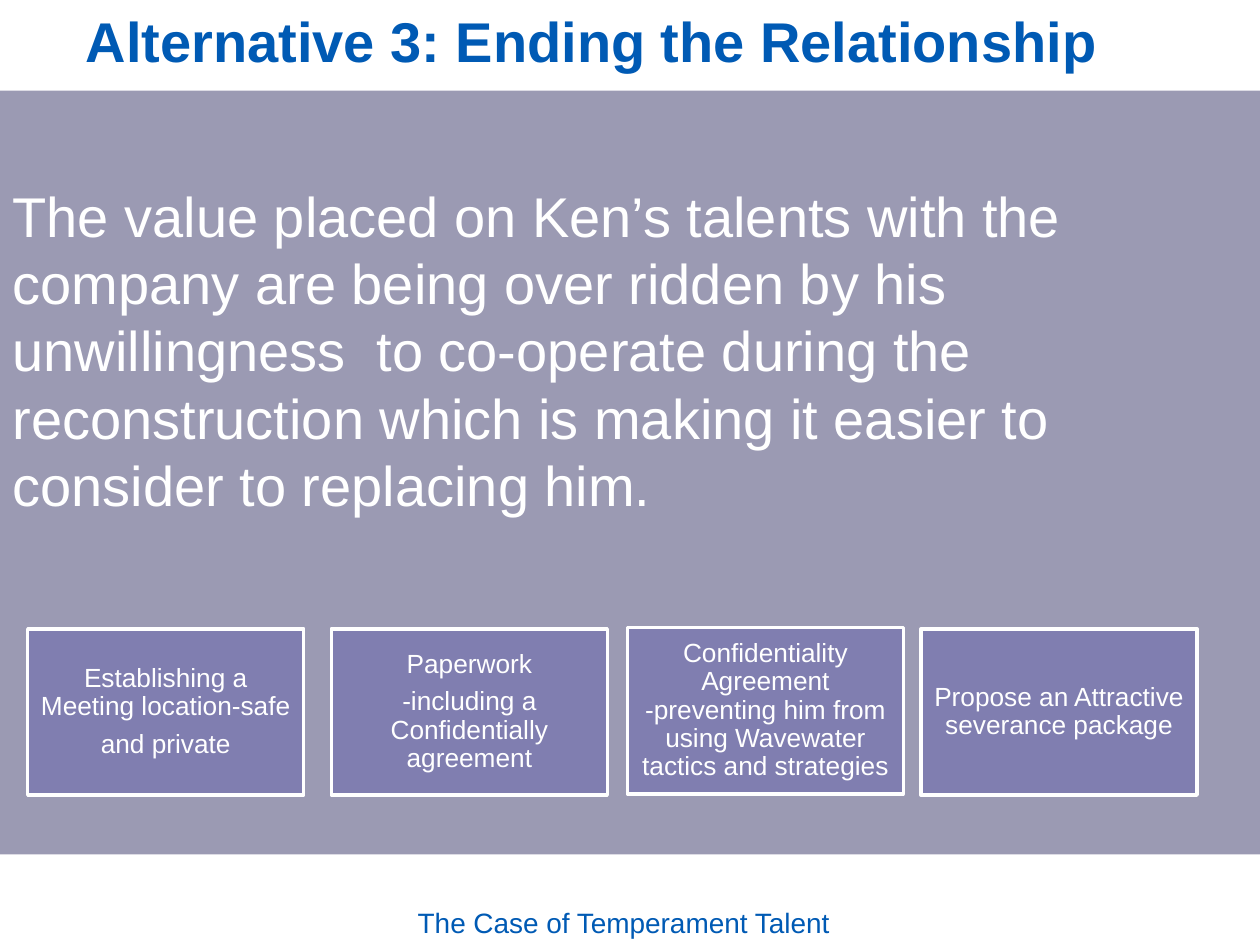
from dataclasses import dataclass

from lxml import etree
from pptx import Presentation
from pptx.dml.color import RGBColor
from pptx.enum.shapes import MSO_SHAPE
from pptx.enum.text import MSO_ANCHOR, MSO_AUTO_SIZE, PP_ALIGN
from pptx.oxml.ns import qn
from pptx.util import Inches, Pt

# Theme
WHITE = RGBColor(0xFF, 0xFF, 0xFF)
BLUE = RGBColor(0x00, 0x5A, 0xB4)
BACKDROP = RGBColor(0x9B, 0x9A, 0xB3)
CARD_FILL = RGBColor(0x80, 0x7E, 0xB0)
FONT = "Arial"
RECTANGLE = MSO_SHAPE.RECTANGLE
LEFT, CENTER = PP_ALIGN.LEFT, PP_ALIGN.CENTER
TOP, MIDDLE, BOTTOM = MSO_ANCHOR.TOP, MSO_ANCHOR.MIDDLE, MSO_ANCHOR.BOTTOM
FIXED_SIZE = MSO_AUTO_SIZE.NONE

# Layout in inches
WIDTH, HEIGHT = 10, 7.5
BAND_HEIGHT = 0.72
CARD_WIDTH, CARD_HEIGHT, CARD_TOP = 2.19, 1.32, 4.99


@dataclass(frozen=True)
class Box:
    left: float
    top: float
    width: float
    height: float

    def lengths(self) -> tuple:
        return tuple(map(Inches, (self.left, self.top, self.width, self.height)))


@dataclass(frozen=True)
class Style:
    size: float
    color: RGBColor
    bold: bool = False
    align: PP_ALIGN = LEFT
    line_spacing: object = 1.0
    space_after: float = 0


@dataclass(frozen=True)
class Card:
    left: float
    lines: tuple
    top: float = CARD_TOP


TITLE_STYLE = Style(32, BLUE, bold=True)
STATEMENT_STYLE = Style(32, WHITE, line_spacing=Pt(38.4))
CARD_STYLE = Style(15, WHITE, align=CENTER, line_spacing=0.9, space_after=5.25)
FOOTER_STYLE = Style(16, BLUE, align=CENTER)

STATEMENT = (
    "The value placed on Ken’s talents with the company are being over ridden "
    "by his unwillingness  to co-operate during the reconstruction which is "
    "making it easier to  consider to replacing him."
)
CARDS = (
    Card(0.22, ("Establishing a Meeting location-safe", "and private")),
    Card(2.63, ("Paperwork", "-including a Confidentially agreement")),
    Card(4.98, ("Confidentiality Agreement -preventing him from using "
                "Wavewater tactics and strategies",), top=4.98),
    Card(7.31, ("Propose an Attractive severance package",)),
)


def write(shape, lines: tuple, style: Style, anchor: MSO_ANCHOR,
          insets: tuple = (0.1, 0.05, 0.1, 0.05)) -> None:
    """Write one unbulleted paragraph for each line."""
    frame = shape.text_frame
    frame.word_wrap = True
    frame.auto_size = FIXED_SIZE
    frame.vertical_anchor = anchor
    (frame.margin_left, frame.margin_top,
     frame.margin_right, frame.margin_bottom) = map(Inches, insets)
    for number, line in enumerate(lines):
        paragraph = frame.add_paragraph() if number else frame.paragraphs[0]
        properties = paragraph._p.get_or_add_pPr()
        properties.set("marL", "0")
        properties.set("indent", "0")
        etree.SubElement(properties, qn("a:buNone"))
        paragraph.alignment = style.align
        paragraph.line_spacing = style.line_spacing
        paragraph.space_before = Pt(0)
        paragraph.space_after = Pt(style.space_after)
        run = paragraph.add_run()
        run.text = line
        run.font.name = FONT
        run.font.size = Pt(style.size)
        run.font.bold = style.bold
        run.font.color.rgb = style.color


def place(shape, box: Box) -> None:
    shape.left, shape.top, shape.width, shape.height = box.lengths()


def add_rectangle(slide, box: Box, fill: RGBColor):
    shape = slide.shapes.add_shape(RECTANGLE, *box.lengths())
    shape.shadow.inherit = False
    shape.fill.solid()
    shape.fill.fore_color.rgb = fill
    shape.line.fill.background()
    return shape


def add_band(slide, top: float) -> None:
    """Add a full-width white band behind everything else."""
    band = add_rectangle(slide, Box(0, top, WIDTH, BAND_HEIGHT), WHITE)
    slide.shapes._spTree.insert(2, band._element)


def add_card(slide, card: Card) -> None:
    box = Box(card.left, card.top, CARD_WIDTH, CARD_HEIGHT)
    shape = add_rectangle(slide, box, CARD_FILL)
    shape.line.color.rgb = WHITE
    shape.line.width = Pt(2)
    write(shape, card.lines, CARD_STYLE, MIDDLE, (0.06,) * 4)


def main() -> None:
    presentation = Presentation()
    presentation.slide_width, presentation.slide_height = Inches(WIDTH), Inches(HEIGHT)
    slide = presentation.slides.add_slide(presentation.slide_layouts[1])

    # Background and bands
    slide.background.fill.solid()
    slide.background.fill.fore_color.rgb = BACKDROP
    for top in (0, HEIGHT - BAND_HEIGHT):
        add_band(slide, top)

    # Title and statement
    title, statement = slide.shapes.title, slide.placeholders[1]
    place(title, Box(0.46, 0, 9, 1.25))
    write(title, ("Alternative 3: Ending the Relationship",), TITLE_STYLE, TOP,
          (0.22, 0.05, 0.1, 0.05))
    place(statement, Box(0, 1.42, 10.22, 2.79))
    write(statement, (STATEMENT,), STATEMENT_STYLE, TOP, (0.1, 0.02, 0.1, 0.05))

    # Steps
    for card in CARDS:
        add_card(slide, card)

    # Footer
    footer = slide.shapes.add_textbox(*Box(2.92, 6.98, 4.06, 0.52).lengths())
    write(footer, ("The Case of Temperament Talent",), FOOTER_STYLE, BOTTOM)

    presentation.save("out.pptx")


if __name__ == "__main__":
    main()
